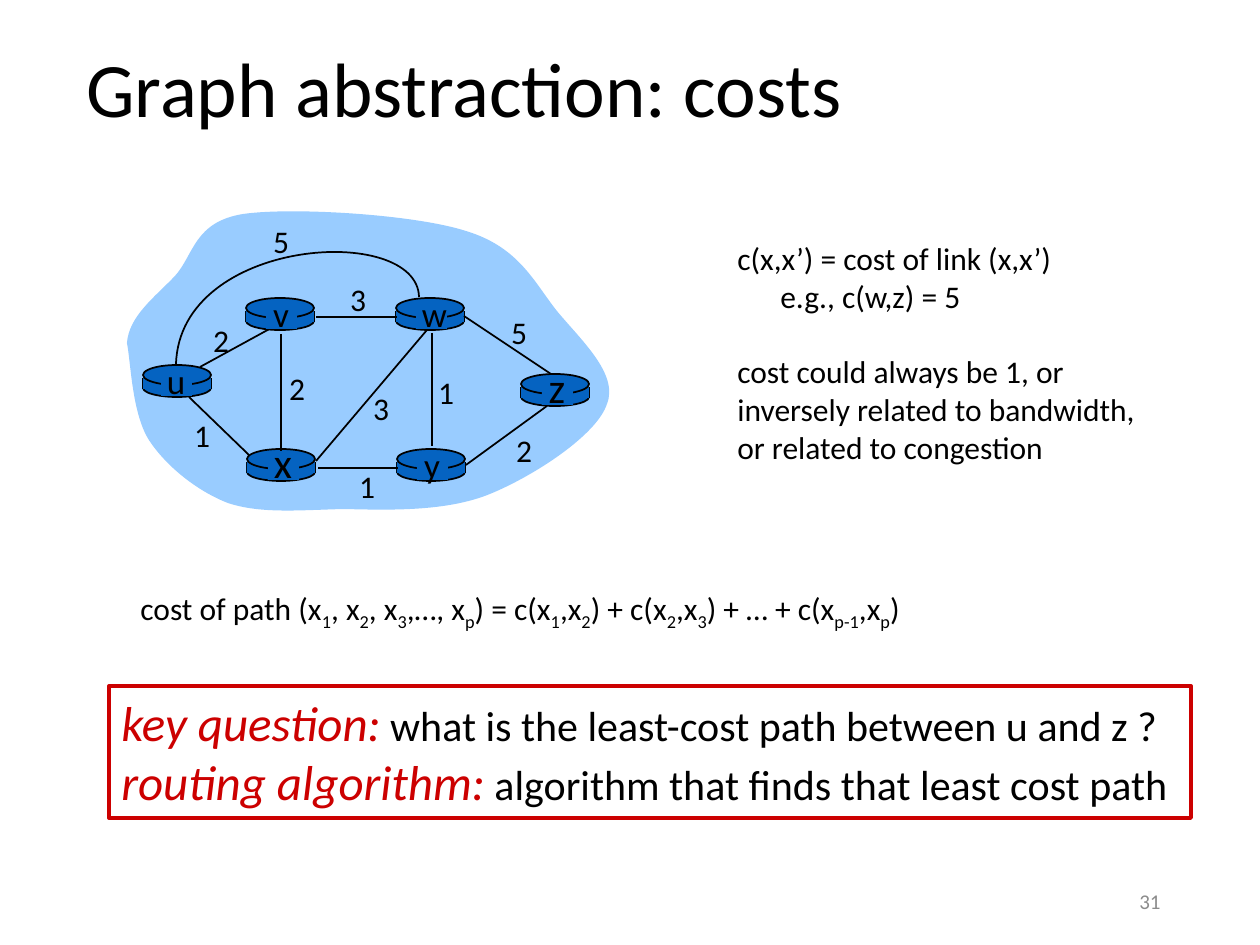
from pptx import Presentation
from pptx.dml.color import RGBColor
from pptx.enum.shapes import MSO_CONNECTOR, MSO_SHAPE
from pptx.enum.text import MSO_ANCHOR, MSO_AUTO_SIZE, PP_ALIGN
from pptx.util import Emu, Pt
from lxml import etree

EMU_PER_PX = 914400 / 126
DRAWING_NS = "{http://schemas.openxmlformats.org/drawingml/2006/main}"
FONT = "Calibri"
COLORS = {"ink": "000000", "cloud": "99CCFF", "router": "0563C1",
          "accent": "CC0000", "muted": "8C8C8C"}

# Each curve is two control points and an end point
CLOUD_START = (127, 343)
CLOUD_CURVES = [
    ((129, 316), (155, 297), (175, 276)), ((194, 255), (194, 222), (243, 214)),
    ((291, 207), (413, 214), (466, 231)), ((519, 247), (534, 282), (557, 311)),
    ((581, 340), (619, 374), (607, 404)), ((597, 435), (534, 476), (490, 494)),
    ((446, 512), (388, 510), (344, 509)), ((301, 510), (261, 514), (228, 503)),
    ((197, 491), (166, 466), (149, 440)), ((132, 413), (131, 363), CLOUD_START),
]
ARC_START = (419, 297)
ARC_CURVES = [((417, 223), (180, 237), (176, 364))]

# Name: router left, router top, label centre x, label centre y, label size
ROUTERS = {
    "u": (143, 365, 176, 380, 20), "x": (247, 449, 283, 462, 24),
    "v": (246, 298, 281, 313, 20), "w": (396, 298, 431, 313, 20),
    "y": (397, 449, 432, 464, 20), "z": (521, 374, 557, 387, 24),
}
LINK_U_V = (200, 367, 275, 326)
LINKS = [
    (432, 333, 432, 446), (281, 334, 281, 451), (316, 461, 427, 330),
    (466, 465, 547, 406), (398, 468, 318, 468), (249, 455, 189, 397),
    (397, 317, 316, 317), (551, 374, 464, 316),
]
# Cost and its centre
COSTS = [("2", 221, 340), ("2", 297, 388), ("1", 202, 435), ("3", 381, 408),
         ("1", 367, 486), ("1", 446, 392), ("2", 524, 450), ("5", 519, 332),
         ("3", 358, 299), ("5", 281, 241)]
# Every second part is a subscript
PATH_COST = ("cost of path (x|1|, x|2|, x|3|,…, x|p|) = c(x|1|,x|2|) + "
             "c(x|2|,x|3|) + … + c(x|p-1|,x|p|)")


def px(length):
    return Emu(round(length * EMU_PER_PX))


def rgb(name):
    return RGBColor.from_string(COLORS[name])


def paint(shape, fill=None, line=None, width=1):
    shape.shadow.inherit = False
    if fill:
        shape.fill.solid()
        shape.fill.fore_color.rgb = rgb(fill)
    else:
        shape.fill.background()
    if line:
        shape.line.color.rgb = rgb(line)
        shape.line.width = Pt(width)
    else:
        shape.line.fill.background()


def add_block(slide, kind, box, **look):
    block = slide.shapes.add_shape(kind, *map(px, box))
    paint(block, **look)
    return block


def add_link(slide, ends):
    link = slide.shapes.add_connector(MSO_CONNECTOR.STRAIGHT, *map(px, ends))
    link.line.color.rgb = rgb("ink")
    link.line.width = Pt(1)
    etree.SubElement(link._element.spPr, DRAWING_NS + "effectLst")


def add_curve(slide, start, curves, closed=False, **look):
    builder = slide.shapes.build_freeform(*start, scale=EMU_PER_PX)
    builder.add_line_segments([point for curve in curves for point in curve],
                              close=closed)
    outline = builder.convert_to_shape()
    # Every three line segments become one Bezier segment
    segments = list(outline._element.iter(DRAWING_NS + "lnTo"))
    for first in range(0, 3 * len(curves), 3):
        bezier = etree.Element(DRAWING_NS + "cubicBezTo")
        segments[first].addprevious(bezier)
        for segment in segments[first:first + 3]:
            bezier.append(segment[0])
            segment.getparent().remove(segment)
    paint(outline, **look)


def add_text(slide, box, paragraphs, size=18, color="ink", align=PP_ALIGN.LEFT,
             anchor=MSO_ANCHOR.TOP, wrap=False, spacing=None, border=None):
    """Each paragraph is a string or a list of (text, format) runs."""
    if border:
        holder = add_block(slide, MSO_SHAPE.RECTANGLE, box, line=border, width=2.25)
    else:
        holder = slide.shapes.add_textbox(*map(px, box))
    frame = holder.text_frame
    frame.word_wrap = wrap
    frame.auto_size = MSO_AUTO_SIZE.NONE if wrap else MSO_AUTO_SIZE.SHAPE_TO_FIT_TEXT
    frame.vertical_anchor = anchor
    for index, runs in enumerate(paragraphs):
        paragraph = frame.add_paragraph() if index else frame.paragraphs[0]
        paragraph.alignment = align
        if spacing:
            paragraph.line_spacing = spacing
        for text, look in [(runs, {})] if isinstance(runs, str) else runs:
            run = paragraph.add_run()
            run.text = text
            run.font.name = FONT
            run.font.size = Pt(look.get("size", size))
            run.font.italic = look.get("italic", False)
            run.font.color.rgb = rgb(look.get("color", color))
            if look.get("subscript"):
                run._r.get_or_add_rPr().set("baseline", "-25000")
    return frame


def add_centred(slide, text, x, y, size=18):
    width, height = 43, {18: 50, 20: 54, 24: 64}[size]
    add_text(slide, (x - width / 2, y - height / 2, width, height), [text],
             size=size, align=PP_ALIGN.CENTER)


def add_router(slide, left, top):
    solid = {"fill": "router", "line": "ink"}
    add_block(slide, MSO_SHAPE.OVAL, (left, top + 14, 68, 18), **solid)
    for side in (left, left + 68):
        add_link(slide, (side, top + 13, side, top + 24))
    add_block(slide, MSO_SHAPE.RECTANGLE, (left, top + 13, 68, 11), fill="router")
    add_block(slide, MSO_SHAPE.OVAL, (left, top, 68, 20), **solid)


def add_network(slide):
    add_curve(slide, CLOUD_START, CLOUD_CURVES, closed=True, fill="cloud")
    add_link(slide, LINK_U_V)
    for left, top, *_ in ROUTERS.values():
        add_router(slide, left, top)
    for link in LINKS:
        add_link(slide, link)
    add_curve(slide, ARC_START, ARC_CURVES, line="ink")
    # Router names, each on a plain patch
    for name, (_, top, x, y, size) in ROUTERS.items():
        add_block(slide, MSO_SHAPE.RECTANGLE, (x - 15, top + 3, 31, 28), fill="router")
        add_centred(slide, name, x, y, size)
    for cost in COSTS:
        add_centred(slide, *cost)


def add_cost_notes(slide):
    notes = add_text(slide, (725, 233, 428, 242), [
        "c(x,x’) = cost of link (x,x’)", "e.g., c(w,z) = 5",
        "cost could always be 1, or", "inversely related to bandwidth,",
        "or related to congestion"])
    example, general = notes.paragraphs[1:3]
    example._p.get_or_add_pPr().set("marL", str(px(43)))
    general.space_before = Pt(21.5)


def main():
    deck = Presentation()
    deck.slide_width, deck.slide_height = px(1260), px(945)
    slide = deck.slides.add_slide(deck.slide_layouts[6])

    # Title
    add_text(slide, (74, 30, 1071, 125), ["Graph abstraction: costs"], size=44,
             anchor=MSO_ANCHOR.MIDDLE, wrap=True, spacing=0.9)

    # Graph and the meaning of its costs
    add_network(slide)
    add_cost_notes(slide)
    path_runs = [(part, {"subscript": index % 2 == 1})
                 for index, part in enumerate(PATH_COST.split("|"))]
    add_text(slide, (128, 583, 824, 50), [path_runs])

    # Key question
    term = {"size": 28, "color": "accent", "italic": True}
    add_text(slide, (109, 686, 1082, 132), [
        [("key question:", term),
         (" what is the least-cost path between u and z ?", {})],
        [("routing algorithm:", term),
         (" algorithm that finds that least cost path", {})],
    ], size=24, border="accent")

    # Slide number
    add_text(slide, (890, 876, 283, 50), ["31"], size=12, color="muted",
             align=PP_ALIGN.RIGHT, anchor=MSO_ANCHOR.MIDDLE, wrap=True)
    deck.save("out.pptx")


if __name__ == "__main__":
    main()
